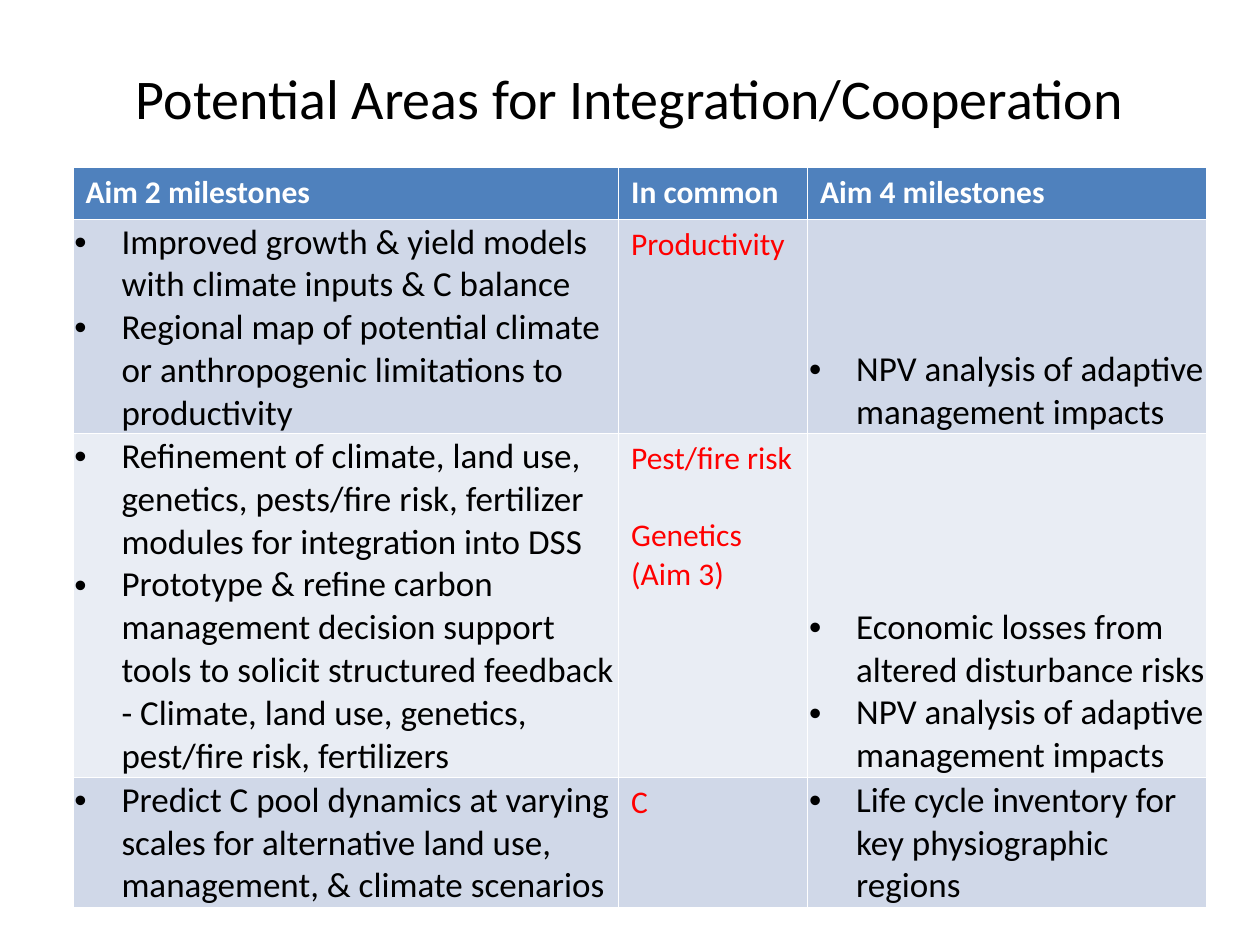
"""Build the slide comparing Aim 2 and Aim 4 milestones."""
from dataclasses import dataclass

from lxml.etree import SubElement
from pptx import Presentation
from pptx.dml.color import RGBColor
from pptx.enum.text import MSO_ANCHOR, PP_ALIGN
from pptx.oxml.ns import qn
from pptx.util import Cm, Pt

COLORS = {
    "text": "000000",
    "header_text": "FFFFFF",
    "common": "FF0000",
    "header": "4F81BD",
    "band_dark": "D0D8E8",
    "band_light": "E9EDF4",
}
FONT = "Calibri"
HEADINGS = ("Aim 2 milestones", "In common", "Aim 4 milestones")
COLUMN_WIDTHS = (11, 3.81, 8.05)
HEADER_HEIGHT = 1.04
BULLET_INDENT = Cm(0.95)


@dataclass(frozen=True)
class MilestoneRow:
    """Milestones of both aims and the topics they share."""

    aim_2: tuple[str, ...]
    common: tuple[str, ...]
    aim_4: tuple[str, ...]
    height: float


MILESTONES = (
    MilestoneRow(
        ("Improved growth & yield models with climate inputs & C balance",
         "Regional map of potential climate or anthropogenic limitations to productivity"),
        ("Productivity",),
        ("NPV analysis of adaptive management impacts",),
        4.32,
    ),
    MilestoneRow(
        ("Refinement of climate, land use, genetics, pests/fire risk, fertilizer "
         "modules for integration into DSS",
         "Prototype & refine carbon management decision support tools to solicit "
         "structured feedback - Climate, land use, genetics, pest/fire risk, fertilizers"),
        ("Pest/fire risk", "Genetics (Aim 3)"),
        ("Economic losses from altered disturbance risks",
         "NPV analysis of adaptive management impacts"),
        6.93,
    ),
    MilestoneRow(
        ("Predict C pool dynamics at varying scales for alternative land use, "
         "management, & climate scenarios",),
        ("C",),
        ("Life cycle inventory for key physiographic regions",),
        2.62,
    ),
)


def style_paragraph(paragraph, size: float, color: str, bold: bool = False) -> None:
    """Set the font of a whole paragraph."""
    font = paragraph.font
    font.name = FONT
    font.size = Pt(size)
    font.bold = bold
    font.color.rgb = RGBColor.from_string(COLORS[color])


def add_bullet(paragraph) -> None:
    """Give a paragraph a hanging round bullet."""
    properties = paragraph._p.get_or_add_pPr()
    properties.set("marL", str(BULLET_INDENT))
    properties.set("indent", str(-BULLET_INDENT))
    SubElement(properties, qn("a:buFont"), typeface="Arial")
    SubElement(properties, qn("a:buChar"), char="•")


def fill_cell(cell, lines: tuple[str, ...], fill: str) -> list:
    """Fill a cell with colour and lines, and return its paragraphs."""
    cell.fill.solid()
    cell.fill.fore_color.rgb = RGBColor.from_string(COLORS[fill])
    cell.text_frame.text = "\n".join(lines)
    return list(cell.text_frame.paragraphs)


def fill_heading(cell, heading: str) -> None:
    """Write a column heading."""
    for paragraph in fill_cell(cell, (heading,), "header"):
        style_paragraph(paragraph, 18, "header_text", bold=True)


def fill_milestones(cell, milestones: tuple[str, ...], band: str) -> None:
    """Write bulleted milestones at the bottom of a cell."""
    cell.vertical_anchor = MSO_ANCHOR.BOTTOM
    cell.margin_left = cell.margin_top = cell.margin_right = Cm(0.03)
    cell.margin_bottom = Cm(0)
    for paragraph in fill_cell(cell, milestones, band):
        add_bullet(paragraph)
        style_paragraph(paragraph, 20, "text")


def fill_common(cell, topics: tuple[str, ...], band: str) -> None:
    """Write shared topics, set apart by one line."""
    for index, paragraph in enumerate(fill_cell(cell, topics, band)):
        if index:
            paragraph.space_before = Pt(22)
        style_paragraph(paragraph, 18, "common")


def add_title(slide, text: str) -> None:
    """Add the centred slide title."""
    title = slide.shapes.add_textbox(Cm(1.27), Cm(0.76), Cm(22.86), Cm(2.41))
    frame = title.text_frame
    frame.word_wrap = True
    frame.vertical_anchor = MSO_ANCHOR.MIDDLE
    frame.text = text
    paragraph = frame.paragraphs[0]
    paragraph.alignment = PP_ALIGN.CENTER
    style_paragraph(paragraph, 32, "text")


def add_milestone_table(slide) -> None:
    """Add the table of milestones."""
    heights = (HEADER_HEIGHT, *(row.height for row in MILESTONES))
    table = slide.shapes.add_table(
        len(heights), len(HEADINGS), Cm(1.47), Cm(3.38),
        Cm(sum(COLUMN_WIDTHS)), Cm(sum(heights)),
    ).table
    for column, width in zip(table.columns, COLUMN_WIDTHS):
        column.width = Cm(width)
    for table_row, height in zip(table.rows, heights):
        table_row.height = Cm(height)
    for column_index, heading in enumerate(HEADINGS):
        fill_heading(table.cell(0, column_index), heading)
    for row_index, row in enumerate(MILESTONES, start=1):
        band = "band_dark" if row_index % 2 else "band_light"
        fill_milestones(table.cell(row_index, 0), row.aim_2, band)
        fill_common(table.cell(row_index, 1), row.common, band)
        fill_milestones(table.cell(row_index, 2), row.aim_4, band)


def main() -> None:
    """Build and save the presentation."""
    presentation = Presentation()
    presentation.slide_width = Cm(25.4)
    presentation.slide_height = Cm(19.05)
    slide = presentation.slides.add_slide(presentation.slide_layouts[6])
    add_title(slide, "Potential Areas for Integration/Cooperation")
    add_milestone_table(slide)
    presentation.save("out.pptx")


if __name__ == "__main__":
    main()
